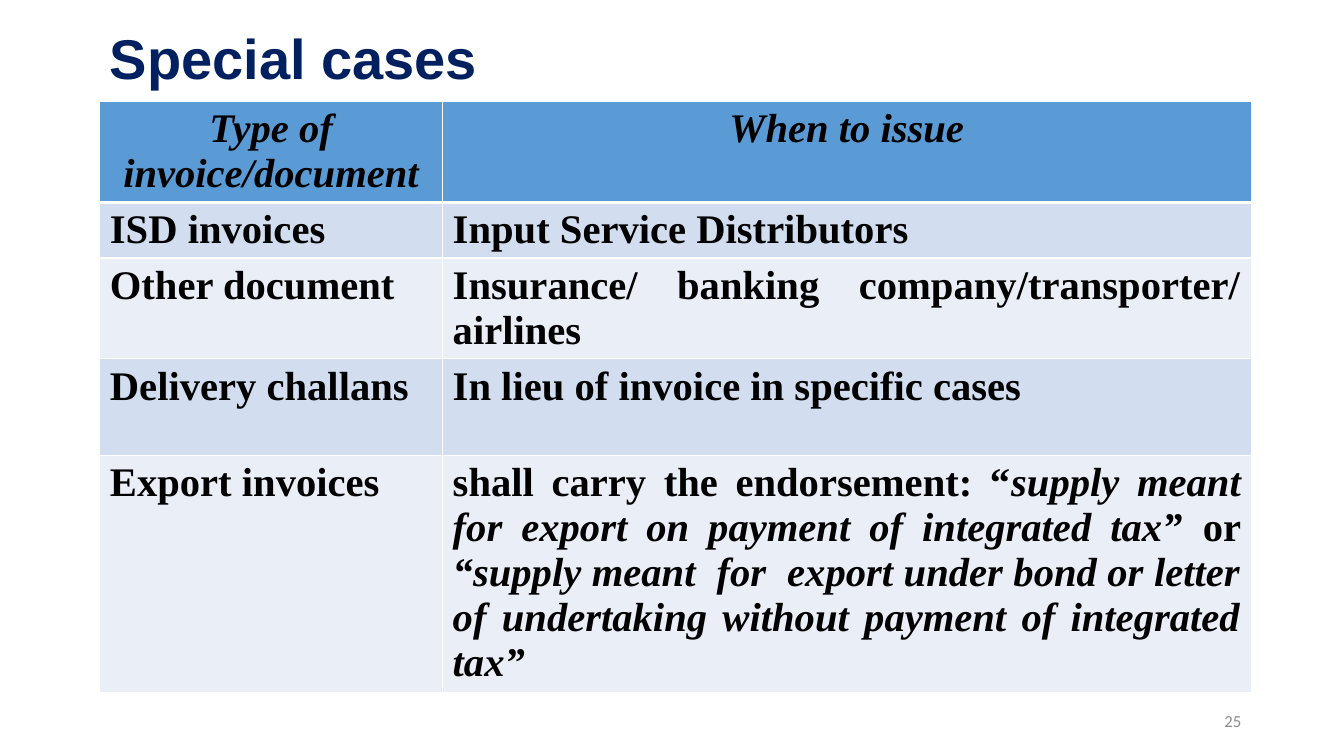
from lxml import etree
from pptx import Presentation
from pptx import util as u
from pptx.dml.color import RGBColor
from pptx.enum import text
from pptx.oxml.ns import qn

PX = 9144
COLORS = {
    "title": "002060",
    "header": "5B9BD5",
    "odd": "D2DEEF",
    "even": "EAEFF7",
    "ink": "000000",
    "border": "FFFFFF",
    "number": "8C8C8C",
}
ALIGN = text.PP_ALIGN
COLUMNS = [340, 802]
HEIGHTS = [100, 55, 100, 96, 235]
HEADER = ["Type of invoice/document", "When to issue"]
CASES = [
    ("ISD invoices", [("Input Service Distributors", False)]),
    ("Other document", [("Insurance/ banking company/transporter/ airlines", False)]),
    ("Delivery challans", [("In lieu of invoice in specific cases ", False)]),
    ("Export invoices", [
        ("shall carry the endorsement: “", False),
        ("supply meant for export on payment of integrated tax” ", True),
        ("or", False),
        (" “supply meant  for  export under bond or letter of undertaking "
         "without payment of integrated tax”", True),
    ]),
]


def px(n):
    return u.Emu(n * PX)


def add_run(p, words, font, size, color, bold=False, italic=False):
    r = p.add_run()
    r.text = words
    r.font.name = font
    r.font.size = u.Pt(size)
    r.font.bold = bold
    r.font.italic = italic
    r.font.color.rgb = RGBColor.from_string(COLORS[color])


def add_label(slide, box, words, font, size, color, bold=False,
              align=ALIGN.LEFT, spacing=1.0):
    tf = slide.shapes.add_textbox(*map(px, box)).text_frame
    tf.word_wrap = True
    tf.vertical_anchor = text.MSO_ANCHOR.MIDDLE
    p = tf.paragraphs[0]
    p.alignment = align
    p.line_spacing = spacing
    add_run(p, words, font, size, color, bold)


def set_borders(cell, widths):
    tcPr = cell._tc.get_or_add_tcPr()
    for i, (side, width) in enumerate(widths.items()):
        ln = etree.Element(qn(f"a:ln{side}"), w=str(u.Pt(width)))
        fill = etree.SubElement(ln, qn("a:solidFill"))
        etree.SubElement(fill, qn("a:srgbClr"), val=COLORS["border"])
        tcPr.insert(i, ln)


def fill_cell(cell, runs, align, fill, top=1, bottom=1):
    cell.fill.solid()
    cell.fill.fore_color.rgb = RGBColor.from_string(COLORS[fill])
    set_borders(cell, {"L": 1, "R": 1, "T": top, "B": bottom})
    p = cell.text_frame.paragraphs[0]
    p.alignment = align
    p.line_spacing = u.Pt(32.1)
    for words, italic in runs:
        add_run(p, words, "Times New Roman", 29, "ink", True, italic)


def add_cases_table(slide):
    table = slide.shapes.add_table(
        len(HEIGHTS), len(COLUMNS), px(99), px(101),
        px(sum(COLUMNS)), px(sum(HEIGHTS))).table
    for column, width in zip(table.columns, COLUMNS):
        column.width = px(width)
    for row, height in zip(table.rows, HEIGHTS):
        row.height = px(height)
    for c, words in enumerate(HEADER):
        fill_cell(table.cell(0, c), [(words, True)], ALIGN.CENTER, "header", bottom=3)
    for i, (kind, timing) in enumerate(CASES, 1):
        fill = "odd" if i % 2 else "even"
        top = 3 if i == 1 else 1
        fill_cell(table.cell(i, 0), [(kind, False)], ALIGN.LEFT, fill, top)
        fill_cell(table.cell(i, 1), timing, ALIGN.JUSTIFY, fill, top)


def main():
    prs = Presentation()
    prs.slide_width, prs.slide_height = px(1333), px(750)
    slide = prs.slides.add_slide(prs.slide_layouts[6])
    add_label(slide, (99, -12, 999, 145), "Special cases", "Arial", 40,
              "title", bold=True, spacing=0.9)
    add_cases_table(slide)
    add_label(slide, (941, 695, 300, 40), "25", "Calibri", 12, "number",
              align=ALIGN.RIGHT)
    prs.save("out.pptx")


if __name__ == "__main__":
    main()
